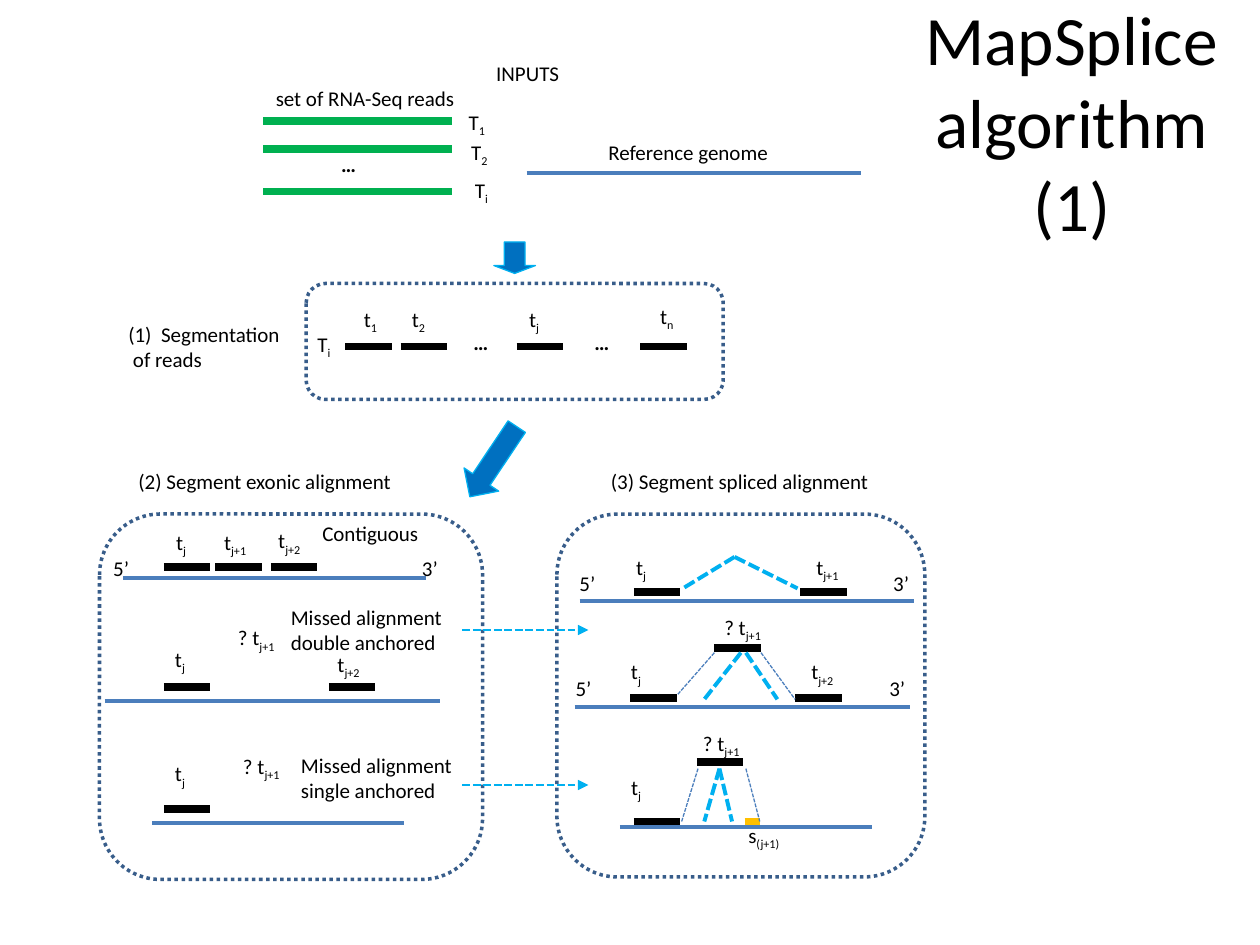
import pptx
import pptx.util
import pptx.dml.color
import pptx.enum.dml
import pptx.enum.shapes
import pptx.enum.text
import pptx.oxml
import pptx.oxml.ns

Inches, Pt = pptx.util.Inches, pptx.util.Pt
DASH = pptx.enum.dml.MSO_LINE
KIND = pptx.enum.shapes.MSO_SHAPE
TEXT = pptx.enum.text

THEME = {
    "font": "Calibri", "title": 39.6, "body": 12, "sub": "-25000",
    "ink": "000000", "read": "00B050", "gene": "4B7EBC", "edge": "385D8A",
    "splice": "00B0F0", "arrow": "0070C0", "part": "FFC000",
}

TITLE = ("MapSplice algorithm (1)", 7.17, 0.17, 2.67, 1.58)

LABELS = [
    ("INPUTS", 3.84, 0.43, 1.4), ("set of RNA-Seq reads", 2.09, 0.63, 1.75),
    ("T_1", 3.62, 0.82, 0.39), ("T_2", 3.64, 1.06, 0.39),
    ("T_i", 3.67, 1.36, 0.39), ("Reference genome", 4.73, 1.06, 1.85),
    ("(1)  Segmentation\v of reads", 0.92, 2.5, 1.67),
    ("T_i", 2.42, 2.58, 0.39), ("t_1", 2.79, 2.38, 0.4),
    ("t_2", 3.17, 2.38, 0.4), ("t_j", 4.1, 2.38, 0.45),
    ("t_n", 5.14, 2.36, 0.51),
    ("(2) Segment exonic alignment", 1, 3.67, 2.71),
    ("Contiguous", 2.46, 4.08, 1.03), ("5’", 0.8, 4.36, 0.45),
    ("3’", 3.25, 4.36, 0.45), ("t_j", 1.3, 4.15, 0.36),
    ("t_j+1", 1.68, 4.15, 0.62), ("t_j+2", 2.11, 4.14, 0.62),
    ("Missed alignment\ndouble anchored", 2.21, 4.75, 1.49),
    ("t_j", 1.29, 5.08, 0.39), ("? t_j+1", 1.79, 4.91, 0.81),
    ("t_j+2", 2.58, 5.12, 0.62),
    ("Missed alignment\nsingle anchored", 2.29, 5.92, 1.5),
    ("t_j", 1.29, 5.99, 0.62), ("? t_j+1", 1.83, 5.93, 1.31),
    ("(3) Segment spliced alignment", 4.75, 3.67, 2.33),
    ("5’", 4.5, 4.48, 0.45), ("3’", 6.99, 4.48, 0.45),
    ("t_j", 4.95, 4.35, 0.46), ("t_j+1", 6.38, 4.35, 0.62),
    ("5’", 4.47, 5.31, 0.45), ("3’", 6.96, 5.31, 0.45),
    ("t_j", 4.91, 5.18, 0.46), ("? t_j+1", 5.65, 4.83, 0.81),
    ("t_j+2", 6.34, 5.18, 0.62), ("t_j", 4.91, 6.1, 0.62),
    ("? t_j+1", 5.48, 5.75, 1.31), ("s_(j+1)", 5.84, 6.48, 1.31),
]
DOTS = [("…", 2.61, 1.15, 1.04), ("…", 3.66, 2.57, 1.04), ("…", 4.62, 2.57, 1.04)]

FRAMES = [(2.43, 2.25, 3.31, 0.92), (0.79, 4.08, 3.04, 2.9), (4.42, 4.08, 2.92, 2.88)]
ARROWS = [(3.92, 1.92, 0.33, 0.25, 0.25, 0), (3.75, 3.33, 0.33, 0.67, 0.5, 33.8)]

READS = [0.96, 1.18, 1.52]
GENES = [
    (4.18, 6.83, 1.37), (0.98, 3.38, 4.59), (0.83, 3.49, 5.56), (1.21, 3.21, 6.53),
    (4.6, 7.25, 4.77), (4.56, 7.22, 5.61), (4.92, 6.92, 6.56),
]
PARTS = [
    (2.75, [2.74, 3.18, 4.1, 5.08]), (4.5, [1.3, 1.71, 2.15]),
    (5.45, [1.3, 2.61]), (6.42, [1.3]), (4.7, [5.03, 6.35]),
    (5.54, [5, 6.31]), (6.52, [5.03]), (5.14, [5.67]), (6.05, [5.53]),
]
LINKS = [5, 6.23]
SPLICES = [
    (5.83, 4.42, 5.42, 4.67), (5.83, 4.42, 6.33, 4.67),
    (5.88, 5.18, 5.59, 5.55), (5.92, 5.18, 6.17, 5.55),
    (5.71, 6.1, 5.59, 6.52), (5.71, 6.1, 5.81, 6.52),
]
RAYS = [
    (5.67, 5.18, 5.38, 5.51), (6.04, 5.18, 6.31, 5.55),
    (5.54, 6.1, 5.41, 6.52), (5.92, 6.1, 6.03, 6.52),
]


def tint(name):
    return pptx.dml.color.RGBColor.from_string(THEME[name])


def stroke(line, name, width, dash=None):
    line.color.rgb = tint(name)
    line.width = Pt(width)
    if dash:
        line.dash_style = dash


def draw_line(slide, ends, name, width, dash=None, head=False):
    item = slide.shapes.add_connector(
        pptx.enum.shapes.MSO_CONNECTOR.STRAIGHT, *map(Inches, ends))
    stroke(item.line, name, width, dash)
    if head:
        tip = pptx.oxml.parse_xml(
            f'<a:tailEnd {pptx.oxml.ns.nsdecls("a")} type="triangle"/>')
        item.line._get_or_add_ln().append(tip)
    item._element.spPr.append(
        pptx.oxml.parse_xml(f'<a:effectLst {pptx.oxml.ns.nsdecls("a")}/>'))


def draw_shape(slide, kind, box, name, width, dash=None, fill=None):
    item = slide.shapes.add_shape(kind, *map(Inches, box))
    item.shadow.inherit = False
    stroke(item.line, name, width, dash)
    if fill:
        item.fill.solid()
        item.fill.fore_color.rgb = tint(fill)
    else:
        item.fill.background()
    return item


def draw_text(slide, text, box, size, bold=False):
    frame = slide.shapes.add_textbox(*map(Inches, box)).text_frame
    frame.word_wrap = True
    base, _, sub = text.partition("_")
    frame.text = base
    if sub:
        run = frame.paragraphs[0].add_run()
        run.text = sub
        run._r.get_or_add_rPr().set("baseline", THEME["sub"])
    for para in frame.paragraphs:
        for run in para.runs:
            run.font.name = THEME["font"]
            run.font.size = Pt(size)
            run.font.bold = bold
            run.font.color.rgb = tint("ink")
    return frame


def draw_label(slide, text, x, y, w, bold=False):
    rows = len(text.splitlines())
    draw_text(slide, text, (x, y, w, 0.1 + 0.2 * rows), THEME["body"], bold)


def main():
    """Build the slide and save it."""
    deck = pptx.Presentation()
    deck.slide_width, deck.slide_height = Inches(10), Inches(7.5)
    slide = deck.slides.add_slide(deck.slide_layouts[6])

    title = draw_text(slide, TITLE[0], TITLE[1:], THEME["title"])
    title.vertical_anchor = TEXT.MSO_ANCHOR.MIDDLE
    title.paragraphs[0].alignment = TEXT.PP_ALIGN.CENTER

    for box in FRAMES:
        draw_shape(slide, KIND.ROUNDED_RECTANGLE, box, "edge", 2, DASH.ROUND_DOT)
    for *box, tip, turn in ARROWS:
        arrow = draw_shape(slide, KIND.DOWN_ARROW, box, "splice", 0.75, fill="arrow")
        arrow.adjustments[1] = tip
        arrow.rotation = turn

    for y in READS:
        draw_line(slide, (2.09, y, 3.59, y), "read", 4.5)
    for x, end, y in GENES:
        draw_line(slide, (x, y, end, y), "gene", 2.25)
    for y, row in PARTS:
        for x in row:
            draw_line(slide, (x, y, x + 0.37, y), "ink", 4.5)
    draw_line(slide, (5.91, 6.52, 6.03, 6.52), "part", 4.5)
    for y in LINKS:
        draw_line(slide, (3.67, y, 4.67, y), "splice", 1.5, DASH.SQUARE_DOT, True)
    for ends in SPLICES:
        draw_line(slide, ends, "splice", 2.25, DASH.SQUARE_DOT)
    for ends in RAYS:
        draw_line(slide, ends, "gene", 0.75, DASH.SQUARE_DOT)

    for label in LABELS:
        draw_label(slide, *label)
    for label in DOTS:
        draw_label(slide, *label, bold=True)
    deck.save("out.pptx")


if __name__ == "__main__":
    main()
